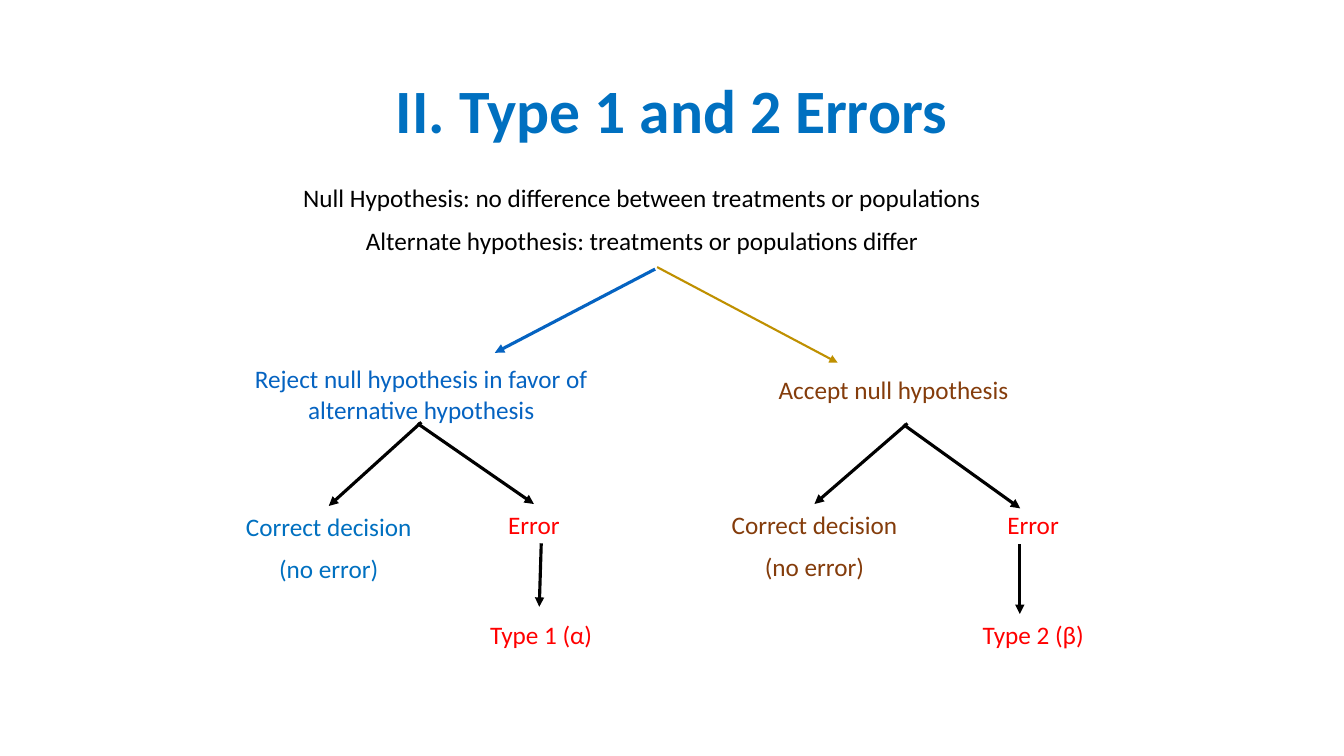
from lxml.etree import SubElement
from pptx import Presentation
from pptx.dml.color import RGBColor
from pptx.enum.shapes import MSO_CONNECTOR as CONN
from pptx.enum.text import MSO_ANCHOR as ANCHOR, PP_ALIGN as ALIGN
from pptx.oxml.ns import qn
from pptx.util import Cm, Pt

COLORS = {
    "title": "0070C0",
    "black": "000000",
    "reject": "0563C1",
    "accept": "843C0B",
    "gold": "BF9000",
    "error": "FF0000",
}
FONT = "Calibri"
TOP = 0  # connection site at the middle of a box's top side


def add_text(s, text, left, top, width, height, color="black", size=18,
             bold=False, anchor=ANCHOR.TOP, line_spacing=None):
    """Add a centred text box with one paragraph per line of text."""
    sp = s.shapes.add_textbox(Cm(left), Cm(top), Cm(width), Cm(height))
    tf = sp.text_frame
    tf.word_wrap = True
    tf.vertical_anchor = anchor
    for i, line in enumerate(text.split("\n")):
        p = tf.add_paragraph() if i else tf.paragraphs[0]
        p.alignment = ALIGN.CENTER
        p.line_spacing = line_spacing
        if i:
            p.space_before = Pt(size / 2)
        r = p.add_run()
        r.text = line
        r.font.name = FONT
        r.font.size = Pt(size)
        r.font.bold = bold
        r.font.color.rgb = RGBColor.from_string(COLORS[color])
    return sp


def add_arrow(s, start, end, color="black", width=2.25, target=None):
    """Add a straight arrow, joined to the top of target if one is given."""
    cx = s.shapes.add_connector(CONN.STRAIGHT, *map(Cm, start + end))
    cx.line.color.rgb = RGBColor.from_string(COLORS[color])
    cx.line.width = Pt(width)
    SubElement(cx.line._get_or_add_ln(), qn("a:tailEnd"), type="triangle")
    SubElement(cx._element.spPr, qn("a:effectLst"))
    if target is not None:
        cx.end_connect(target, TOP)
    return cx


def add_fork(s, dx, dy, correct=None, error=None):
    """Add the two arrows from a decision to its outcomes."""
    add_arrow(s, (10.62 + dx, 10.64 + dy), (8.2 + dx, 12.85 + dy), target=correct)
    add_arrow(s, (10.52 + dx, 10.67 + dy), (13.46 + dx, 12.78 + dy), target=error)


def main():
    prs = Presentation()
    prs.slide_width, prs.slide_height = Cm(33.87), Cm(19.05)
    s = prs.slides.add_slide(prs.slide_layouts[6])

    # Title and hypotheses
    add_text(s, "II. Type 1 and 2 Errors", 2.33, 1.02, 29.21, 3.68, color="title",
             size=44, bold=True, anchor=ANCHOR.MIDDLE, line_spacing=0.9)
    add_text(s, "Null Hypothesis: no difference between treatments or populations\n"
                "Alternate hypothesis: treatments or populations differ",
             5.74, 4.47, 20.88, 2.18)

    # Decisions
    add_text(s, "Reject null hypothesis in favor of alternative hypothesis",
             5.74, 9.04, 9.75, 1.8, color="reject")
    add_text(s, "Accept null hypothesis", 18.85, 9.32, 7.34, 1.02, color="accept")

    # Outcomes
    correct = "Correct decision\n(no error)"
    reject_ok = add_text(s, correct, 5.11, 12.75, 6.35, 2.18, color="title")
    reject_error = add_text(s, "Error", 10.28, 12.7, 6.35, 1.02, color="error")
    accept_ok = add_text(s, correct, 17.35, 12.7, 6.35, 2.18, color="accept")
    add_text(s, "Error", 22.86, 12.7, 6.35, 1.02, color="error")

    # Error types
    add_text(s, "Type 1 (α)", 11, 15.49, 5.28, 1.02, color="error")
    add_text(s, "Type 2 (β)", 22.23, 15.49, 7.62, 1.02, color="error")

    # Arrows from hypotheses to decisions
    add_arrow(s, (16.51, 6.78), (12.47, 8.89), color="reject")
    add_arrow(s, (16.56, 6.73), (21.11, 9.14), color="gold", width=1.5)

    # Arrows from decisions to outcomes
    add_fork(s, 0, 0, correct=reject_ok, error=reject_error)
    add_fork(s, 12.25, 0.03, correct=accept_ok)

    # Arrows from errors to their types
    add_arrow(s, (13.64, 13.69), (13.59, 15.29))
    add_arrow(s, (25.7, 13.72), (25.7, 15.47))

    prs.save("out.pptx")


if __name__ == "__main__":
    main()
